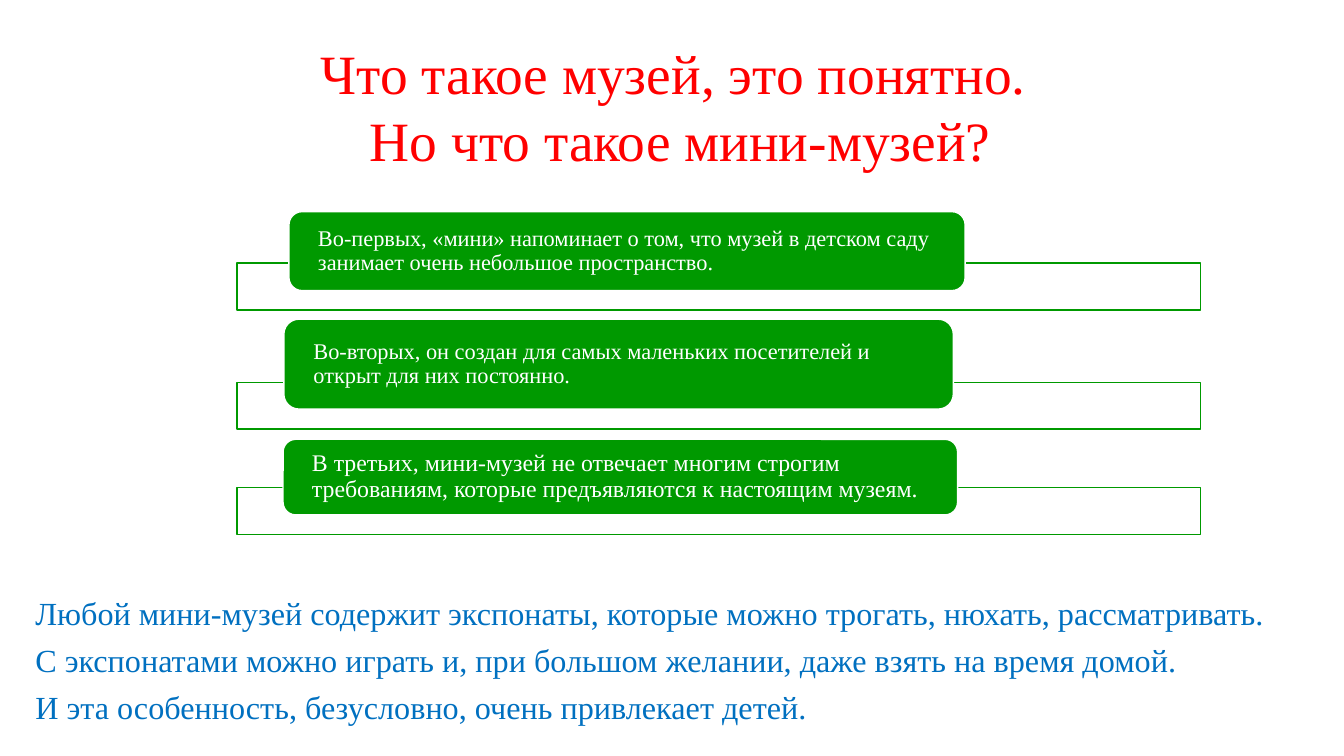
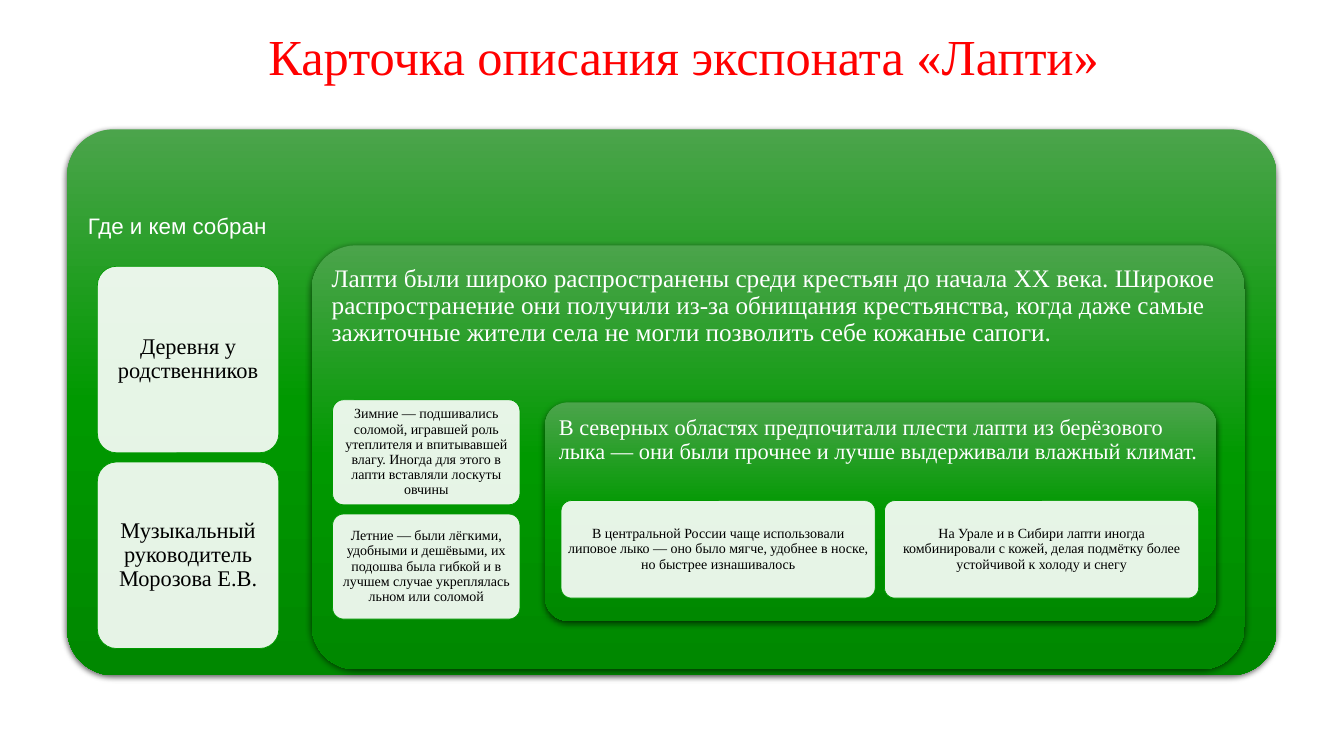
import copy

import lxml.etree
import pptx
import pptx.dml.color
import pptx.enum.shapes
import pptx.enum.text
import pptx.oxml.ns
import pptx.util

# Grid: 160 columns by 90 rows of square cells
CELL = pptx.util.Pt(6)
COLUMNS, ROWS = 160, 90
GAP = 1.1

# Shared look
RED = pptx.dml.color.RGBColor(0xFF, 0x00, 0x00)
BLUE = pptx.dml.color.RGBColor(0x00, 0x70, 0xC0)
GREEN = pptx.dml.color.RGBColor(0x00, 0x99, 0x00)
LIGHT_GREEN = pptx.dml.color.RGBColor(0x4B, 0xA4, 0x4B)
DARK_GREEN = pptx.dml.color.RGBColor(0x00, 0x88, 0x00)
WHITE = pptx.dml.color.RGBColor(0xFF, 0xFF, 0xFF)
BLACK = pptx.dml.color.RGBColor(0x00, 0x00, 0x00)
SERIF, SANS = "Times New Roman", "Arial"

SHAPES = pptx.enum.shapes.MSO_SHAPE
ALIGN = pptx.enum.text.PP_ALIGN
ANCHOR = pptx.enum.text.MSO_ANCHOR
qn = pptx.oxml.ns.qn

# Wording
ANSWERS = [  # pill box, rail top, text size, text
    ((34.4, 25.2, 80.5, 9.4), 31.3, 16,
     "Во-первых, «мини» напоминает о том, что музей в детском саду "
     "занимает очень небольшое пространство."),
    ((33.8, 38, 79.7, 10.7), 45.5, 16,
     "Во-вторых, он создан для самых маленьких посетителей и "
     "открыт для них постоянно."),
    ((33.7, 52.3, 80.3, 9), 58, 17,
     "В третьих, мини-музей не отвечает многим строгим "
     "требованиям, которые предъявляются к настоящим музеям."),
]
CONCLUSION = [
    "Любой мини-музей содержит экспонаты, которые можно трогать, нюхать, рассматривать.",
    "С экспонатами можно играть и, при большом желании, даже взять на время домой.",
    "И эта особенность, безусловно, очень привлекает детей.",
]
COLLECTED = ["Деревня у родственников", "Музыкальный руководитель Морозова Е.В."]
HISTORY = (
    "Лапти были широко распространены среди крестьян до начала XX века. "
    "Широкое распространение они получили из-за обнищания крестьянства, когда "
    "даже самые зажиточные жители села не могли позволить себе кожаные сапоги."
)
SEASONS = [
    "Зимние — подшивались соломой, игравшей роль утеплителя и впитывавшей влагу. "
    "Иногда для этого в лапти вставляли лоскуты овчины",
    "Летние — были лёгкими, удобными и дешёвыми, их подошва была гибкой и в "
    "лучшем случае укреплялась льном или соломой",
]
NORTH = (
    "В северных областях предпочитали плести лапти из берёзового лыка — "
    "они были прочнее и лучше выдерживали влажный климат."
)
REGIONS = [
    "В центральной России чаще использовали липовое лыко — оно было мягче, "
    "удобнее в носке, но быстрее изнашивалось",
    "На Урале и в Сибири лапти иногда комбинировали с кожей, делая подмётку "
    "более устойчивой к холоду и снегу",
]


def cells(*counts):
    return [round(count * CELL) for count in counts]


def write_text(frame, lines, size, color, font=SERIF, align=ALIGN.LEFT,
               anchor=ANCHOR.TOP, spacing=1.0, gap=0, insets=None):
    """Fill a text frame, one paragraph per line; insets are in inches."""
    frame.word_wrap = True
    frame.auto_size = pptx.enum.text.MSO_AUTO_SIZE.NONE
    frame.vertical_anchor = anchor
    if insets:
        (frame.margin_left, frame.margin_top, frame.margin_right,
         frame.margin_bottom) = map(pptx.util.Inches, insets)
    for index, line in enumerate(lines):
        paragraph = frame.add_paragraph() if index else frame.paragraphs[0]
        paragraph.text = line
        paragraph.alignment = align
        paragraph.line_spacing = spacing
        paragraph.space_before = pptx.util.Pt(gap if index else 0)
        for run in paragraph.runs:
            run.font.size = pptx.util.Pt(size)
            run.font.name = font
            run.font.color.rgb = color


def move(placeholder, box):
    (placeholder.left, placeholder.top,
     placeholder.width, placeholder.height) = cells(*box)


def set_title(slide, text, box, size):
    move(slide.shapes.title, box)
    write_text(slide.shapes.title.text_frame, [text], size, RED,
               align=ALIGN.CENTER, anchor=ANCHOR.MIDDLE)


def add_unbulleted_body(slide, lines, box, **style):
    body = slide.placeholders[1]
    move(body, box)
    write_text(body.text_frame, lines, **style)
    for paragraph in body.text_frame.paragraphs:
        properties = paragraph._p.get_or_add_pPr()
        properties.set("marL", "0")
        properties.set("indent", "0")
        lxml.etree.SubElement(properties, qn("a:buNone"))


def add_box(slide, kind, box, fill, line=None, weight=1, opacity=100, corner=None):
    shape = slide.shapes.add_shape(kind, *cells(*box))
    shape.shadow.inherit = False
    shape.fill.solid()
    shape.fill.fore_color.rgb = fill
    if opacity < 100:
        tint = shape._element.spPr.find(f"{qn('a:solidFill')}/{qn('a:srgbClr')}")
        lxml.etree.SubElement(tint, qn("a:alpha"), val=str(opacity * 1000))
    if line is None:
        shape.line.fill.background()
    else:
        shape.line.color.rgb = line
        shape.line.width = pptx.util.Pt(weight)
    if corner is not None:
        shape.adjustments[0] = corner
    return shape


def add_panel(slide, box, text, size, font=SERIF, corner=0.105, top_inset=0.07):
    """Raised panel with a vertical green gradient and a soft shadow."""
    panel = add_box(slide, SHAPES.ROUNDED_RECTANGLE, box, GREEN, corner=corner)
    panel.fill.gradient()
    panel.fill.gradient_angle = 270
    properties = panel._element.spPr
    stops = properties.find(f"{qn('a:gradFill')}/{qn('a:gsLst')}")
    stops.append(copy.deepcopy(stops[0]))
    shades = (LIGHT_GREEN, GREEN, DARK_GREEN)
    for index, (stop, shade) in enumerate(zip(panel.fill.gradient_stops, shades)):
        stop.position = index / 2
        stop.color.rgb = shade
    shadow = lxml.etree.SubElement(
        properties.find(qn("a:effectLst")), qn("a:outerShdw"),
        blurRad=str(pptx.util.Pt(4.5)), dist=str(pptx.util.Pt(1.5)),
        dir="5400000", algn="ctr", rotWithShape="0")
    shade = lxml.etree.SubElement(shadow, qn("a:srgbClr"), val=str(BLACK))
    lxml.etree.SubElement(shade, qn("a:alpha"), val="63000")
    write_text(panel.text_frame, [text], size, WHITE, font=font, spacing=0.9,
               insets=(0.07, top_inset, 0.07, 0.07))


def add_cards(slide, first_box, texts, size, inset, across=False):
    """Equal pale cards, stacked or side by side."""
    left, top, width, height = first_box
    for index, text in enumerate(texts):
        step_x = index * (width + GAP) if across else 0
        step_y = 0 if across else index * (height + GAP)
        card = add_box(slide, SHAPES.ROUNDED_RECTANGLE,
                       (left + step_x, top + step_y, width, height), WHITE,
                       line=GREEN, weight=0.5, opacity=90, corner=0.105)
        write_text(card.text_frame, [text], size, BLACK, align=ALIGN.CENTER,
                   anchor=ANCHOR.MIDDLE, spacing=0.9, insets=[inset] * 4)


def add_answer(slide, pill_box, rail_top, size, text):
    """Green pill lying on a thin outlined rail."""
    add_box(slide, SHAPES.RECTANGLE, (28.2, rail_top, 114.7, 5.6), WHITE,
            line=GREEN, opacity=90)
    pill = add_box(slide, SHAPES.ROUNDED_RECTANGLE, pill_box, GREEN, line=WHITE)
    write_text(pill.text_frame, [text], size, WHITE, anchor=ANCHOR.MIDDLE,
               spacing=0.9, insets=(0.25, 0, 0.25, 0))


def build_mini_museum(deck):
    slide = deck.slides.add_slide(deck.slide_layouts[1])
    set_title(slide, "Что такое музей, это понятно. \nНо что такое мини-музей?",
              (9, 4.6, 144, 16), 39.6)
    add_unbulleted_body(slide, CONCLUSION, (3, 70, 156, 17),
                        size=23, color=BLUE, gap=6)
    for answer in ANSWERS:
        add_answer(slide, *answer)


def build_exhibit_card(deck):
    slide = deck.slides.add_slide(deck.slide_layouts[5])
    set_title(slide, "Карточка описания экспоната «Лапти»",
              (25.6, 2.3, 111.6, 8.5), 36)
    # Who collected it and where
    add_panel(slide, (8, 15.4, 144, 65), "Где и кем собран", 16, font=SANS,
              corner=0.085, top_inset=0.72)
    add_cards(slide, (11.6, 31.7, 21.6, 22.2), COLLECTED, 16, 0.07)
    # History and seasons
    add_panel(slide, (37.1, 29.2, 111.1, 50.5), HISTORY, 18)
    add_cards(slide, (39.6, 47.6, 22.3, 12.5), SEASONS, 10, 0.04)
    # Regions
    add_panel(slide, (64.9, 47.9, 79.9, 26), NORTH, 16)
    add_cards(slide, (66.8, 59.6, 37.4, 11.6), REGIONS, 10, 0.04, across=True)


def main():
    deck = pptx.Presentation()
    deck.slide_width, deck.slide_height = cells(COLUMNS, ROWS)
    build_mini_museum(deck)
    build_exhibit_card(deck)
    deck.save("out.pptx")


if __name__ == "__main__":
    main()
